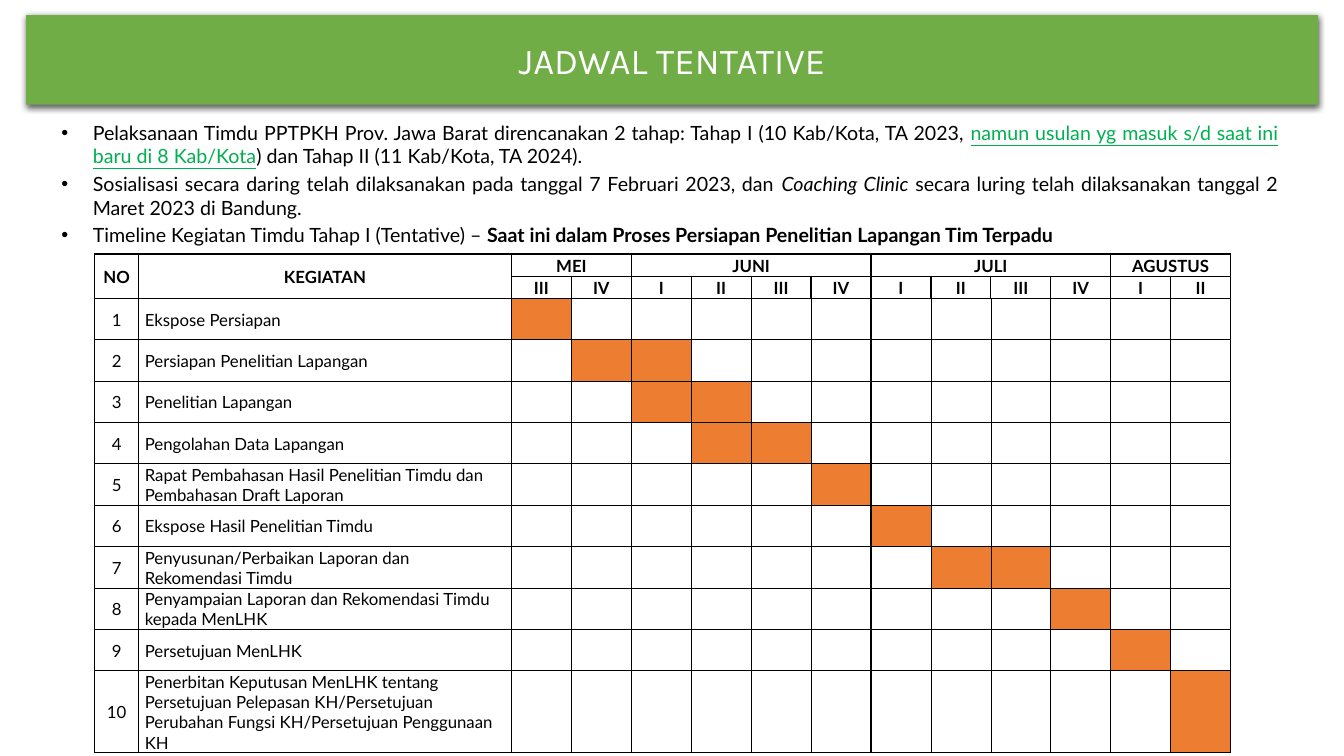
from lxml.etree import SubElement
from pptx import Presentation
from pptx.dml.color import RGBColor
from pptx.enum.shapes import MSO_SHAPE
from pptx.enum.text import MSO_ANCHOR, PP_ALIGN
from pptx.oxml.ns import qn
from pptx.util import Cm, Pt

GREEN = RGBColor(0x70, 0xAD, 0x47)
TEXT_GREEN = RGBColor(0x00, 0xB0, 0x50)
ORANGE = RGBColor(0xED, 0x7D, 0x31)
BLACK = RGBColor(0, 0, 0)
WHITE = RGBColor(255, 255, 255)

TITLE = "JADWAL TENTATIVE"
BULLETS = [
    [
        ("Pelaksanaan Timdu PPTPKH Prov. Jawa Barat direncanakan 2 tahap: "
         "Tahap I (10 Kab/Kota, TA 2023, ", "plain"),
        ("namun usulan yg masuk s/d saat ini baru di 8 Kab/Kota", "highlight"),
        (") dan Tahap II (11 Kab/Kota, TA 2024).", "plain"),
    ],
    [
        ("Sosialisasi secara daring telah dilaksanakan pada tanggal 7 Februari 2023, dan ", "plain"),
        ("Coaching Clinic", "italic"),
        (" secara luring telah dilaksanakan tanggal 2 Maret 2023 di Bandung.", "plain"),
    ],
    [
        ("Timeline Kegiatan Timdu Tahap I (Tentative) – ", "plain"),
        ("Saat ini dalam Proses Persiapan Penelitian Lapangan Tim Terpadu", "bold"),
    ],
]
HEADINGS = ["NO", "KEGIATAN"]
MONTHS = [
    ("MEI", ["III", "IV"]),
    ("JUNI", ["I", "II", "III", "IV"]),
    ("JULI", ["I", "II", "III", "IV"]),
    ("AGUSTUS", ["I", "II"]),
]
ACTIVITIES = [
    ("Ekspose Persiapan", 1, 1),
    ("Persiapan Penelitian Lapangan", 2, 3),
    ("Penelitian Lapangan", 3, 4),
    ("Pengolahan Data Lapangan", 4, 5),
    ("Rapat Pembahasan Hasil Penelitian Timdu dan Pembahasan Draft Laporan", 6, 6),
    ("Ekspose Hasil Penelitian Timdu", 7, 7),
    ("Penyusunan/Perbaikan Laporan dan Rekomendasi Timdu", 8, 9),
    ("Penyampaian Laporan dan Rekomendasi Timdu kepada MenLHK", 10, 10),
    ("Persetujuan MenLHK", 11, 11),
    ("Penerbitan Keputusan MenLHK tentang Persetujuan Pelepasan KH/Persetujuan "
     "Perubahan Fungsi KH/Persetujuan Penggunaan KH", 12, 12),
]
HEADER_ROWS = 2
WEEKS = sum(len(weeks) for month, weeks in MONTHS)
COLUMN_WIDTHS = [1.1, 9.4] + [1.51] * WEEKS
ROW_HEIGHTS = [0.56] * HEADER_ROWS + [1.04] * (len(ACTIVITIES) - 1) + [1.63]


def format_run(run, size, color=BLACK, name="Lato"):
    run.font.size = Pt(size)
    run.font.name = name
    run.font.color.rgb = color


def add_title(slide):
    banner = slide.shapes.add_shape(MSO_SHAPE.RECTANGLE, Cm(0.66), Cm(0.38), Cm(32.56), Cm(2.26))
    banner.fill.solid()
    banner.fill.fore_color.rgb = GREEN
    banner.line.fill.background()
    banner.shadow.inherit = False
    effects = banner._element.spPr.find(qn("a:effectLst"))
    shadow = SubElement(effects, qn("a:outerShdw"), blurRad=str(Pt(4.5)), dist=str(Pt(1.5)),
                        dir="5400000", algn="ctr", rotWithShape="0")
    color = SubElement(shadow, qn("a:srgbClr"), val=str(BLACK))
    SubElement(color, qn("a:alpha"), val="63000")
    banner.text_frame.text = TITLE
    banner.text_frame.vertical_anchor = MSO_ANCHOR.MIDDLE
    paragraph = banner.text_frame.paragraphs[0]
    paragraph.alignment = PP_ALIGN.CENTER
    format_run(paragraph.runs[0], 26, WHITE, "Karla")


def add_bullets(slide):
    text_frame = slide.shapes.add_textbox(Cm(1.3), Cm(2.92), Cm(31.17), Cm(3.45)).text_frame
    text_frame.word_wrap = True
    for index, pieces in enumerate(BULLETS):
        paragraph = text_frame.add_paragraph() if index else text_frame.paragraphs[0]
        properties = paragraph._p.get_or_add_pPr()
        properties.set("marL", str(Cm(0.79)))
        properties.set("indent", str(-Cm(0.79)))
        SubElement(properties, qn("a:buFont"), typeface="Arial")
        SubElement(properties, qn("a:buChar"), char="•")
        paragraph.alignment = PP_ALIGN.JUSTIFY
        if index:
            paragraph.space_before = Pt(3)
        for text, style in pieces:
            run = paragraph.add_run()
            run.text = text
            format_run(run, 14, TEXT_GREEN if style == "highlight" else BLACK)
            run.font.underline = style == "highlight"
            run.font.italic = style == "italic"
            run.font.bold = style == "bold"


def set_borders(cell, widths):
    properties = cell._tc.get_or_add_tcPr()
    for side, width in zip("LRTB", widths):
        line = SubElement(properties, qn(f"a:ln{side}"), w=str(Pt(width)))
        fill = SubElement(line, qn("a:solidFill"))
        SubElement(fill, qn("a:srgbClr"), val=str(BLACK))


def fill_cell(cell, text, bold, centered):
    cell.text_frame.text = text
    cell.vertical_anchor = MSO_ANCHOR.MIDDLE
    cell.margin_left = cell.margin_right = cell.margin_top = Cm(0.03)
    cell.margin_bottom = 0
    paragraph = cell.text_frame.paragraphs[0]
    if centered:
        paragraph.alignment = PP_ALIGN.CENTER
    else:
        paragraph._p.get_or_add_pPr().set("marL", str(Cm(0.13)))
    paragraph.font.size = Pt(12)
    for run in paragraph.runs:
        format_run(run, 12)
        run.font.bold = bold


def add_schedule(slide):
    row_count, column_count = len(ROW_HEIGHTS), len(COLUMN_WIDTHS)
    table = slide.shapes.add_table(row_count, column_count, Cm(2.39), Cm(6.4),
                                   Cm(sum(COLUMN_WIDTHS)), Cm(sum(ROW_HEIGHTS))).table
    table.first_row = table.horz_banding = False
    for column, width in zip(table.columns, COLUMN_WIDTHS):
        column.width = Cm(width)
    for row, height in zip(table.rows, ROW_HEIGHTS):
        row.height = Cm(height)

    first_week = len(HEADINGS)
    month_row = HEADINGS + [""] * WEEKS
    week_row = [""] * first_week
    strong_columns = {0, 1, first_week}
    strong_rows = {0, 1, HEADER_ROWS, row_count}
    for index in range(first_week):
        table.cell(0, index).merge(table.cell(1, index))
    for month, weeks in MONTHS:
        start = len(week_row)
        month_row[start] = month
        week_row += weeks
        strong_columns.add(len(week_row))
        table.cell(0, start).merge(table.cell(0, len(week_row) - 1))

    contents = [month_row, week_row]
    for number, (activity, start, end) in enumerate(ACTIVITIES, 1):
        contents.append([str(number), activity] + [""] * WEEKS)

    for row, texts in enumerate(contents):
        header = row < HEADER_ROWS
        for column, text in enumerate(texts):
            cell = table.cell(row, column)
            fill_cell(cell, text, header, header or column != 1)
            set_borders(cell, [1 if header or edge in strong_columns else 0.5
                               for edge in (column, column + 1)]
                        + [1 if edge in strong_rows else 0.5 for edge in (row, row + 1)])
            cell.fill.background()

    for row, (activity, start, end) in enumerate(ACTIVITIES, HEADER_ROWS):
        for week in range(start, end + 1):
            cell = table.cell(row, first_week + week - 1)
            cell.fill.solid()
            cell.fill.fore_color.rgb = ORANGE


def main():
    presentation = Presentation()
    presentation.slide_width, presentation.slide_height = Cm(33.87), Cm(19.05)
    slide = presentation.slides.add_slide(presentation.slide_layouts[6])
    add_title(slide)
    add_schedule(slide)
    add_bullets(slide)
    presentation.save("out.pptx")


if __name__ == "__main__":
    main()
